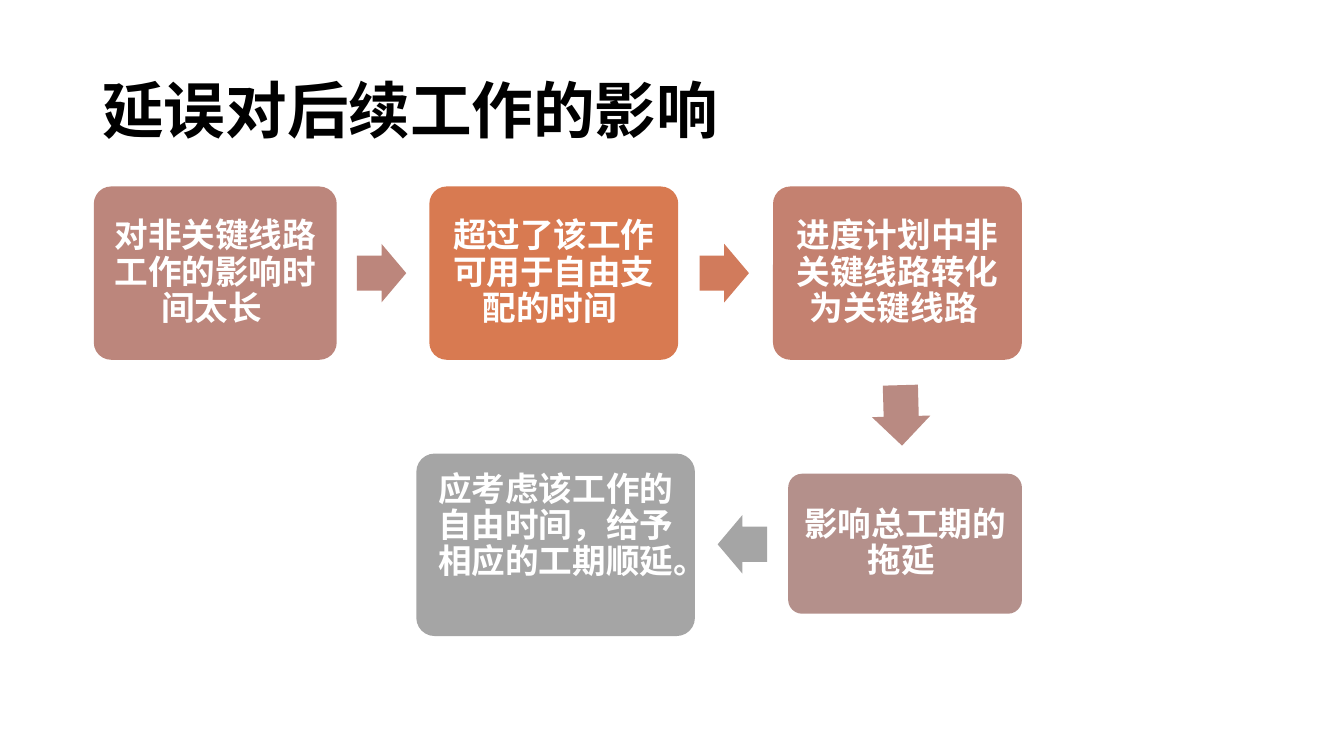
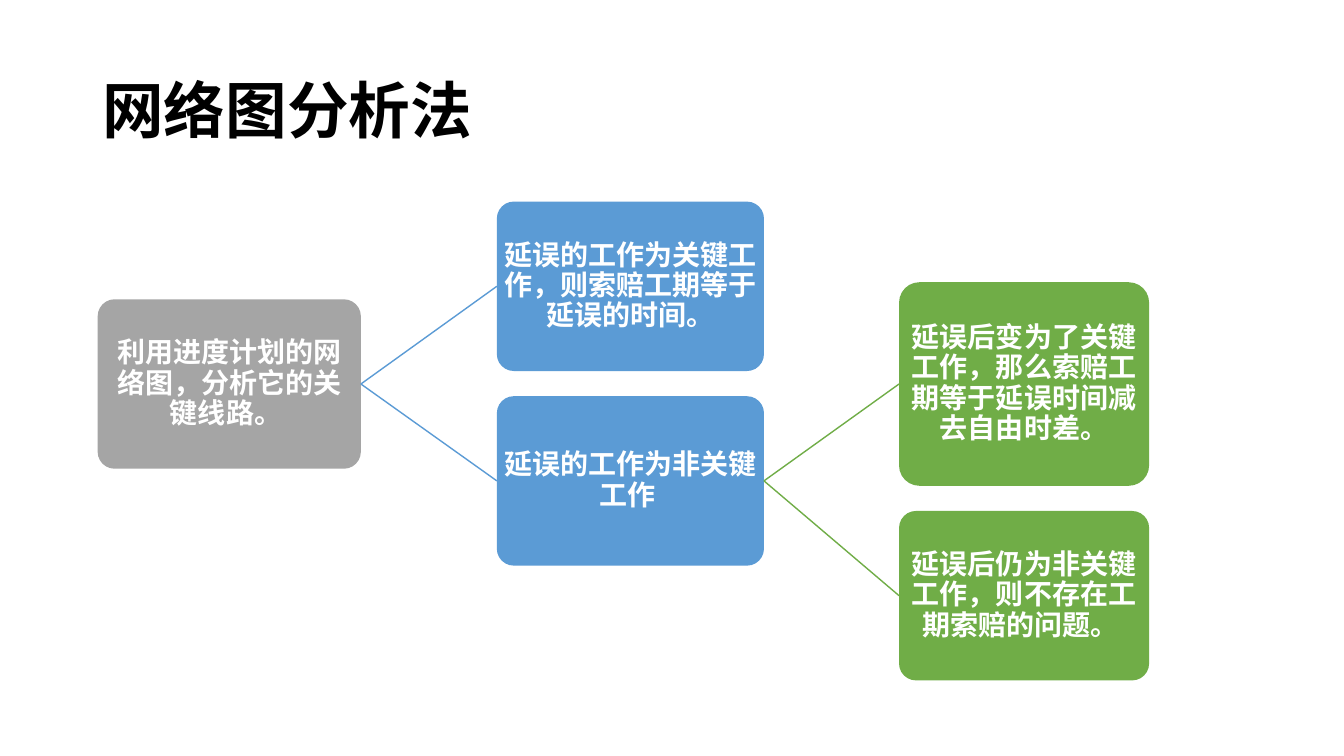
"""Builds two slides on how delays affect later work and on network diagram analysis."""
import pptx
import pptx.util
import pptx.dml.color
import pptx.enum.shapes
import pptx.enum.text
import pptx.oxml.ns
import lxml.etree

Pt = pptx.util.Pt
RGB = pptx.dml.color.RGBColor.from_string
SHAPE = pptx.enum.shapes.MSO_SHAPE
ANCHOR = pptx.enum.text.MSO_ANCHOR
ALIGN = pptx.enum.text.PP_ALIGN

FONT = "Times New Roman"
COLORS = {
    "black": "000000", "white": "FFFFFF", "grey": "A5A5A5",
    "rose": "BC867C", "orange": "D87A51", "coral": "D17B5C",
    "clay": "C48170", "dusk": "B98A82", "mauve": "B4908B",
    "blue": "5B9BD5", "green": "70AD47",
}

prs = pptx.Presentation()
prs.slide_width, prs.slide_height = Pt(960), Pt(540)


def write(sp, text, size, color, align, inset):
    tf = sp.text_frame
    tf.word_wrap = True
    tf.vertical_anchor = ANCHOR.MIDDLE
    tf.margin_left = tf.margin_right = tf.margin_top = tf.margin_bottom = Pt(inset)
    p = tf.paragraphs[0]
    p.text = text
    p.alignment = align
    p.line_spacing = 0.9
    p.font.name, p.font.size, p.font.bold = FONT, Pt(size), True
    p.font.color.rgb = RGB(COLORS[color])


def add_block(s, kind, x, y, w, h, color, adjustments):
    sp = s.shapes.add_shape(kind, Pt(x), Pt(y), Pt(w), Pt(h))
    sp.shadow.inherit = False
    sp.fill.solid()
    sp.fill.fore_color.rgb = RGB(COLORS[color])
    sp.line.fill.background()
    for i, value in enumerate(adjustments):
        sp.adjustments[i] = value
    return sp


slides = []
for title in ["延误对后续工作的影响", "网络图分析法"]:
    s = prs.slides.add_slide(prs.slide_layouts[6])
    sp = s.shapes.add_textbox(Pt(66), Pt(28.8), Pt(828), Pt(104.4))
    write(sp, title, 44, "black", ALIGN.LEFT, 7.2)
    slides.append(s)
flow, tree = slides

steps = [
    (67, 133.2, 173.5, 123.8, "rose", "对非关键线路工作的影响时间太长 "),
    (306.7, 133.2, 177.8, 123.8, "orange", "超过了该工作可用于自由支配的时间 "),
    (552.2, 133.2, 177.8, 123.8, "clay", "进度计划中非关键线路转化为关键线路 "),
    (563, 338.4, 167, 100, "mauve", "影响总工期的拖延 "),
    (297.4, 324, 199, 130.3, "grey", "应考虑该工作的自由时间，给予相应的工期顺延。 "),
]
for x, y, w, h, color, text in steps:
    sp = add_block(flow, SHAPE.ROUNDED_RECTANGLE, x, y, w, h, color, [0.1])
    write(sp, text, 24, "white", ALIGN.CENTER, 7.2)

arrows = [
    (254.9, 174.2, 35.3, 0, "rose"),
    (499.7, 174.2, 35.3, 0, "coral"),
    (622.1, 275.8, 43.2, 88.4, "dusk"),
    (512.6, 367.9, 35.3, 180, "grey"),
]
for x, y, w, rotation, color in arrows:
    sp = add_block(flow, SHAPE.RIGHT_ARROW, x, y, w, 41.8, color, [0.6, 0.5])
    sp.rotation = rotation

GAP = 18
columns = [
    (69.8, 213.8, 188, "grey", [(121, "利用进度计划的网络图，分析它的关键线路。 ")]),
    (354.9, 144, 190.8, "blue", [
        (121, "延误的工作为关键工作，则索赔工期等于延误的时间。"),
        (121, "延误的工作为非关键工作 "),
    ]),
    (642.2, 201.6, 178.6, "green", [
        (145.4, "延误后变为了关键工作，那么索赔工期等于延误时间减去自由时差。"),
        (121, "延误后仍为非关键工作，则不存在工期索赔的问题。 "),
    ]),
]
parent = None
for x, y, w, color, nodes in columns:
    for h, text in nodes:
        sp = add_block(tree, SHAPE.ROUNDED_RECTANGLE, x, y, w, h, color, [0.1])
        write(sp, text, 20, "white", ALIGN.CENTER, 0.72)
        y += h + GAP
        if parent is not None:
            line = tree.shapes.add_connector(pptx.enum.shapes.MSO_CONNECTOR.STRAIGHT, 0, 0, 0, 0)
            line.begin_connect(parent, 3)
            line.end_connect(sp, 1)
            line.line.color.rgb = RGB(COLORS[color])
            line.line.width = Pt(1)
            lxml.etree.SubElement(line._element.spPr, pptx.oxml.ns.qn("a:effectLst"))
    parent = sp

prs.save("out.pptx")
